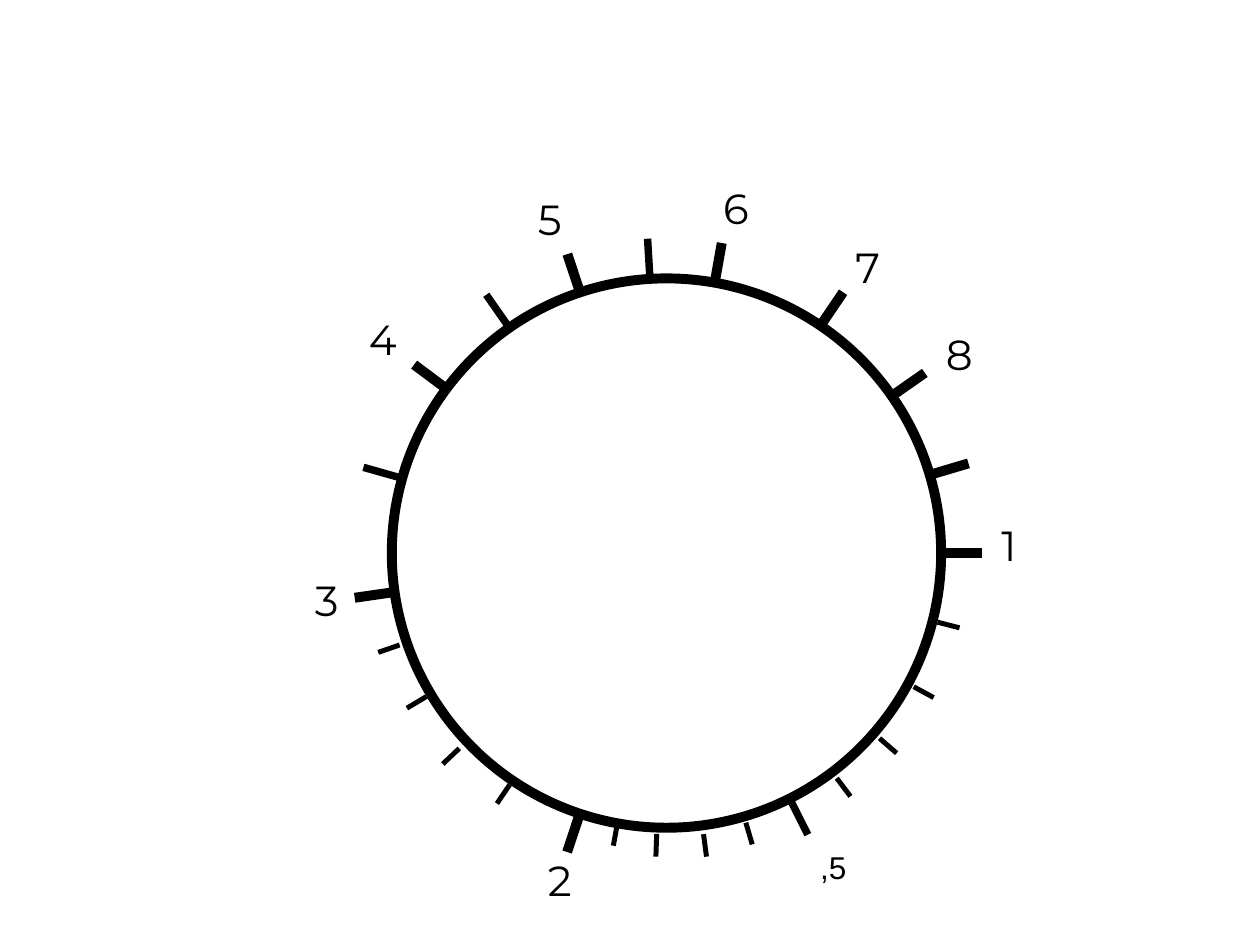
from math import cos, radians, sin

from pptx import Presentation
from pptx.dml.color import RGBColor
from pptx.enum.shapes import MSO_CONNECTOR as Conn, MSO_SHAPE as Shape
from pptx.oxml.ns import qn
from pptx.util import Inches, Pt

HUES = {"ink": "000000"}
MID = (5.29, 4.39)
RING = 2.18

# Angles run clockwise in degrees from the mark at the right.
BOLD = [0, 108.4, 171.85, 216.75, 251.65, 280.1, 304.1, 325.1, 343.45]
HALF = [63.35, 195.8, 235.1, 266.55]
# Angle and inner radius of each fine mark.
FINE = [
    (14.3, 2.22), (28.4, 2.23), (41, 2.24), (52.9, 2.24),
    (73.6, 2.23), (82.5, 2.25), (92, 2.23), (100.3, 2.18),
    (124.1, 2.22), (136.7, 2.26), (149.15, 2.22), (161, 2.24),
]
# Left and top of the numbers 1 to 8.
SPOTS = [
    (7.85, 4.07), (4.25, 6.73), (2.4, 4.51), (2.83, 2.44),
    (4.17, 1.49), (5.64, 1.4), (6.69, 1.87), (7.41, 2.56),
]


class Dial:
    def __init__(self, slide, mid, font="Montserrat"):
        self.mid = mid
        self.font = font
        self.ink = RGBColor.from_string(HUES["ink"])
        self.shapes = slide.shapes.add_group_shape().shapes

    def pen(self, item, width):
        item.line.color.rgb = self.ink
        item.line.width = Pt(width)

    def point(self, angle, radius):
        turn = radians(angle)
        x, y = self.mid
        return Inches(x + radius * cos(turn)), Inches(y + radius * sin(turn))

    def tick(self, angle, start, size, width):
        line = self.shapes.add_connector(
            Conn.STRAIGHT,
            *self.point(angle, start),
            *self.point(angle, start + size),
        )
        self.pen(line, width)
        props = line._element.spPr
        props.append(props.makeelement(qn("a:effectLst"), {}))

    def label(self, text, left, top, wide=0.43, high=0.71, size=24, font=None):
        box = self.shapes.add_textbox(
            Inches(left), Inches(top), Inches(wide), Inches(high)
        )
        frame = box.text_frame
        frame.text = text
        frame.word_wrap = False
        face = frame.paragraphs[0].runs[0].font
        face.name = font or self.font
        face.size = Pt(size)
        face.color.rgb = self.ink

    def ring(self, radius, width):
        x, y = self.mid
        side = Inches(2 * radius)
        oval = self.shapes.add_shape(
            Shape.OVAL, Inches(x - radius), Inches(y - radius), side, side
        )
        oval.shadow.inherit = False
        oval.fill.background()
        self.pen(oval, width)


def main():
    deck = Presentation()
    deck.slide_width, deck.slide_height = Inches(10), Inches(7.5)
    dial = Dial(deck.slides.add_slide(deck.slide_layouts[6]), MID)

    for angles, width in ((BOLD, 5.67), (HALF, 4.25)):
        for angle in angles:
            dial.tick(angle, 2.17, 0.33, width)
    for angle, start in FINE:
        dial.tick(angle, start, 0.18, 2.83)

    for number, spot in enumerate(SPOTS, 1):
        dial.label(str(number), *spot)
    dial.label(",5", 6.41, 6.68, 0.55, 0.5, size=18, font="Arial")
    dial.ring(RING, 5.67)

    deck.save("out.pptx")


if __name__ == "__main__":
    main()
